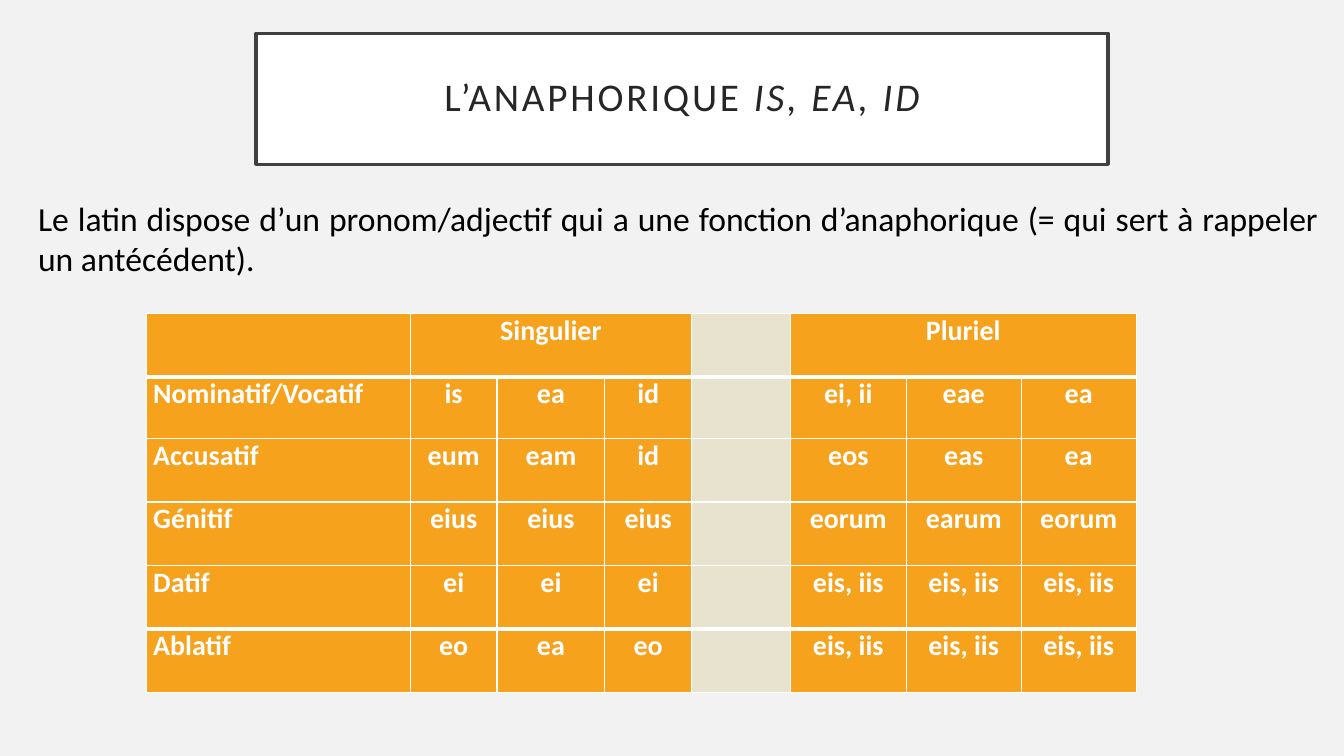
from lxml import etree
from pptx import Presentation
from pptx import util as u
from pptx.dml.color import RGBColor
from pptx.enum import text
from pptx.oxml.ns import qn

COLORS = {
    "background": "F2F2F2",
    "white": "FFFFFF",
    "frame": "404040",
    "title": "262626",
    "body": "000000",
    "orange": "F6A21D",
    "beige": "E8E3CE",
}
FONT = "Calibri"
GAP_COLUMN = 4
COLUMN_WIDTHS = [2.62, 0.86, 1.07, 0.86, 0.98, 1.15, 1.14, 1.14]
ROW_HEIGHTS = [0.63, 0.61, 0.63, 0.63, 0.63, 0.63]
DECLENSION = [
    ["", "Singulier", "", "", "", "Pluriel", "", ""],
    ["Nominatif/Vocatif", "is", "ea", "id", "", "ei, ii", "eae", "ea"],
    ["Accusatif", "eum", "eam", "id", "", "eos", "eas", "ea"],
    ["Génitif", "eius", "eius", "eius", "", "eorum", "earum", "eorum"],
    ["Datif", "ei", "ei", "ei", "", "eis, iis", "eis, iis", "eis, iis"],
    ["Ablatif", "eo", "ea", "eo", "", "eis, iis", "eis, iis", "eis, iis"],
]


def rgb(name):
    return RGBColor.from_string(COLORS[name])


def paint(fill, color):
    fill.solid()
    fill.fore_color.rgb = rgb(color)


def format_runs(paragraph, size, color, bold=False):
    for run in paragraph.runs:
        run.font.name = FONT
        run.font.size = u.Pt(size)
        run.font.bold = bold
        run.font.color.rgb = rgb(color)


def place(part, left, top, width, height):
    part.left, part.top = u.Inches(left), u.Inches(top)
    part.width, part.height = u.Inches(width), u.Inches(height)


def add_title(slide):
    title = slide.shapes.title
    place(title, 2.54, 0.33, 8.45, 1.3)
    paint(title.fill, "white")
    title.line.color.rgb = rgb("frame")
    title.line.width = u.Pt(2.5)
    frame = title.text_frame
    frame.text = "L’ANAPHORIQUE "
    frame.word_wrap = True
    frame.auto_size = text.MSO_AUTO_SIZE.NONE
    frame.vertical_anchor = text.MSO_ANCHOR.MIDDLE
    frame.margin_left = frame.margin_right = u.Inches(0.2)
    frame.margin_top = frame.margin_bottom = u.Inches(0.2)
    heading = frame.paragraphs[0]
    heading.alignment = text.PP_ALIGN.CENTER
    heading.line_spacing = 0.9
    pronouns = heading.add_run()
    pronouns.text = "IS, EA, ID"
    pronouns.font.italic = True
    format_runs(heading, 28, "title")
    for run in heading.runs:
        run.font._element.set("spc", "200")


def add_explanation(slide):
    box = slide.shapes.add_textbox(
        u.Inches(0.28), u.Inches(1.91), u.Inches(12.9), u.Inches(0.91))
    frame = box.text_frame
    frame.word_wrap = True
    frame.text = ("Le latin dispose d’un pronom/adjectif qui a une fonction "
                  "d’anaphorique (= qui sert à rappeler un antécédent).")
    frame.paragraphs[0].alignment = text.PP_ALIGN.JUSTIFY
    format_runs(frame.paragraphs[0], 24, "body")


def set_borders(cell, top, bottom):
    properties = cell._tc.get_or_add_tcPr()
    for side, width in (("L", 1), ("R", 1), ("T", top), ("B", bottom)):
        line = etree.SubElement(properties, qn(f"a:ln{side}"), w=str(u.Pt(width)))
        solid = etree.SubElement(line, qn("a:solidFill"))
        etree.SubElement(solid, qn("a:srgbClr"), val=COLORS["white"])


def fill_cell(cell, row, column):
    last = len(DECLENSION) - 1
    set_borders(cell, 3 if row in (1, last) else 1, 3 if row in (0, last - 1) else 1)
    paint(cell.fill, "beige" if column == GAP_COLUMN else "orange")
    cell.margin_left = cell.margin_right = u.Inches(0.07)
    cell.margin_top = cell.margin_bottom = 0
    label = DECLENSION[row][column]
    if label:
        cell.text = label
        paragraph = cell.text_frame.paragraphs[0]
        paragraph.alignment = text.PP_ALIGN.CENTER if column else text.PP_ALIGN.LEFT
        format_runs(paragraph, 20, "white", bold=True)


def add_declension(slide):
    table = slide.shapes.add_table(
        len(ROW_HEIGHTS), len(COLUMN_WIDTHS), u.Inches(1.45), u.Inches(3.11),
        u.Inches(sum(COLUMN_WIDTHS)), u.Inches(sum(ROW_HEIGHTS))).table
    table.horz_banding = False
    for column, width in zip(table.columns, COLUMN_WIDTHS):
        column.width = u.Inches(width)
    for row, height in zip(table.rows, ROW_HEIGHTS):
        row.height = u.Inches(height)
    for first in (1, GAP_COLUMN + 1):
        table.cell(0, first).merge(table.cell(0, first + 2))
    for row in range(len(ROW_HEIGHTS)):
        for column in range(len(COLUMN_WIDTHS)):
            fill_cell(table.cell(row, column), row, column)


def main():
    deck = Presentation()
    deck.slide_width, deck.slide_height = u.Inches(13.33), u.Inches(7.5)
    slide = deck.slides.add_slide(deck.slide_layouts[5])
    paint(slide.background.fill, "background")
    add_title(slide)
    add_explanation(slide)
    add_declension(slide)
    deck.save("out.pptx")


if __name__ == "__main__":
    main()
